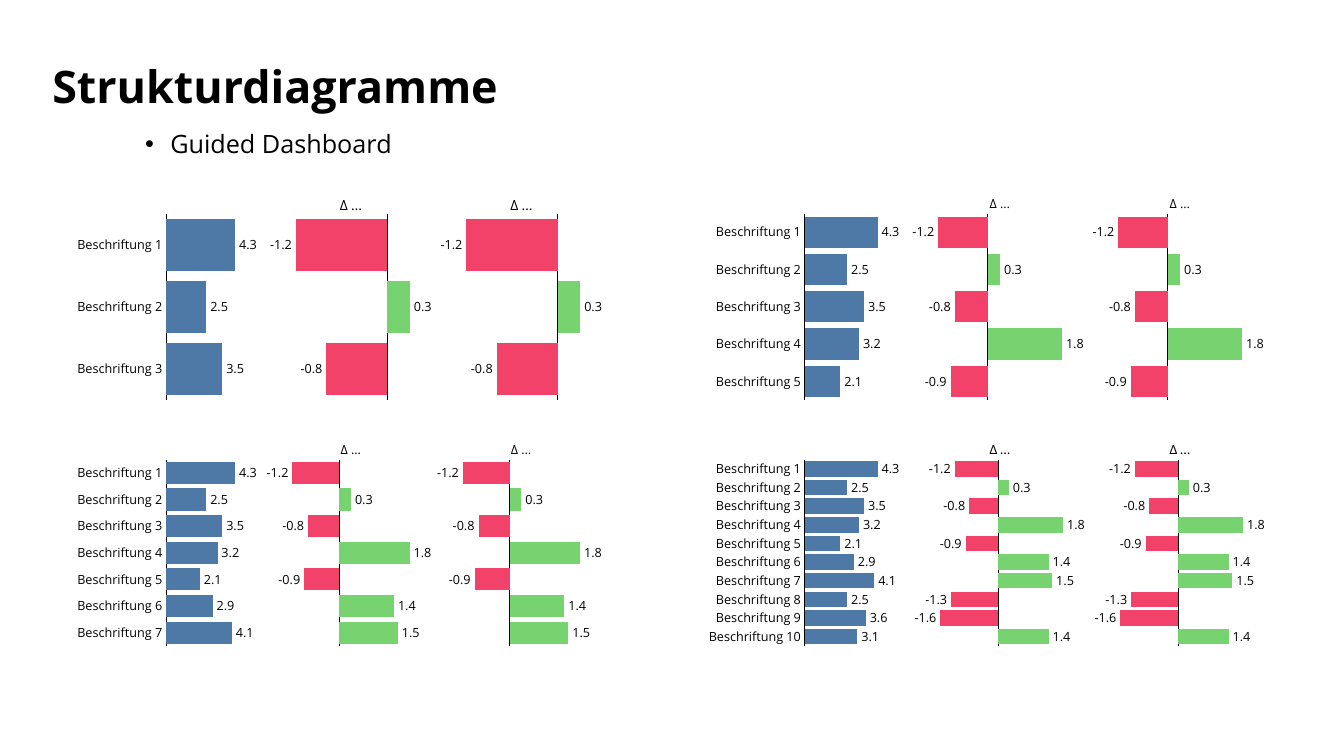
from lxml import etree
from pptx import Presentation
from pptx.chart.data import CategoryChartData
from pptx.dml.color import RGBColor
from pptx.enum.chart import XL_CHART_TYPE, XL_LABEL_POSITION, XL_TICK_LABEL_POSITION, XL_TICK_MARK
from pptx.enum.text import MSO_ANCHOR
from pptx.oxml import parse_xml
from pptx.oxml.ns import nsdecls, qn
from pptx.util import Inches, Pt

BLACK = RGBColor(0x00, 0x00, 0x00)
BLUE = RGBColor(0x4E, 0x79, 0xA7)
GREEN = RGBColor(0x77, 0xD3, 0x6F)
RED = RGBColor(0xF2, 0x42, 0x69)
FONT = "Open Sans"

BASE_VALUES = (4.3, 2.5, 3.5, 3.2, 2.1, 2.9, 4.1, 2.5, 3.6, 3.1)
DELTA_VALUES = (-1.2, 0.3, -0.8, 1.8, -0.9, 1.4, 1.5, -1.3, -1.6, 1.4)

# Shares of a panel's width: left edge and width
BASE_COLUMN = (0, 0.38)
DELTA_COLUMNS = ((0.386, 0.304), (0.695, 0.304))
# Shares of a chart's width: left edge and width of the plot
BASE_PLOT = (0.543, 0.383)
DELTA_PLOT = (0.092, 0.816)

PANEL_COLUMNS = ((0.52, 5.47), (6.79, 5.78))
PANEL_ROWS = (1.8, 4.24)
PANEL_HEIGHT = 2.32

# Number of bars, delta axis range, font and size of the delta titles
PANELS = (
    (3, (-1.4, 0.4), FONT, 10),
    (5, (-1.5, 2), FONT, 9),
    (7, (-1.5, 2), FONT, 9),
    (10, (-2, 2), "Calibri", 10),
)


def set_font(font, **changes):
    values = {"name": FONT, "size": Pt(9), "bold": False, **changes}
    for name, value in values.items():
        setattr(font, name, value)
    font.color.rgb = BLACK


def set_plot_area(chart, left, width):
    """Fix the inner plot area, in shares of the chart's size."""
    plot_area = chart._chartSpace.chart.plotArea
    for layout in plot_area.findall(qn("c:layout")):
        plot_area.remove(layout)
    layout = parse_xml(f"<c:layout {nsdecls('c')}><c:manualLayout/></c:layout>")
    settings = {"layoutTarget": "inner", "xMode": "edge", "yMode": "edge",
                "x": left, "y": 0.138, "w": width, "h": 0.797}
    for name, value in settings.items():
        etree.SubElement(layout[0], qn(f"c:{name}")).set("val", str(value))
    plot_area.insert(0, layout)


def add_bars(slide, box, categories, values, axis_range, plot_share, color):
    data = CategoryChartData(number_format="#,##0.0")
    data.categories = categories
    data.add_series("Series 1", values)
    frame = slide.shapes.add_chart(
        XL_CHART_TYPE.BAR_CLUSTERED, *(Inches(length) for length in box), data)
    chart = frame.chart
    chart.has_legend = False
    chart.has_title = False
    set_font(chart.font)
    set_plot_area(chart, *plot_share)

    category_axis = chart.category_axis
    category_axis.reverse_order = True
    category_axis.major_tick_mark = XL_TICK_MARK.NONE
    category_axis.format.line.color.rgb = BLACK
    category_axis.format.line.width = Pt(0.75)
    set_font(category_axis.tick_labels.font)

    value_axis = chart.value_axis
    value_axis.minimum_scale, value_axis.maximum_scale = axis_range
    value_axis.has_major_gridlines = False
    value_axis.visible = False

    plot = chart.plots[0]
    plot.gap_width = 20
    plot.vary_by_categories = False
    plot.has_data_labels = True
    labels = plot.data_labels
    label_format = {"show_value": True, "number_format": "#,##0.0",
                    "number_format_is_linked": False,
                    "position": XL_LABEL_POSITION.OUTSIDE_END}
    for name, value in label_format.items():
        setattr(labels, name, value)
    set_font(labels.font)

    series = plot.series[0]
    series.invert_if_negative = False
    series.format.fill.solid()
    series.format.fill.fore_color.rgb = color
    return chart


def add_delta_bars(slide, box, values, axis_range, title_font, title_size):
    """Add a variance chart with red negative bars and no category labels."""
    categories = [str(number) for number in range(1, len(values) + 1)]
    chart = add_bars(slide, box, categories, values, axis_range, DELTA_PLOT, GREEN)
    chart.category_axis.tick_label_position = XL_TICK_LABEL_POSITION.NONE
    for index, value in enumerate(values):
        if value < 0:
            fill = chart.plots[0].series[0].points[index].format.fill
            fill.solid()
            fill.fore_color.rgb = RED
    paragraph = chart.chart_title.text_frame.paragraphs[0]
    run = paragraph.add_run()
    run.text = " ∆ …"
    set_font(run.font, name=title_font, size=Pt(title_size))
    chart.chart_title.include_in_layout = False


def add_panel(slide, left, top, width, height, count, delta_range, title_font, title_size):
    """Add one base chart and its two variance charts side by side."""
    def column_box(column):
        start, share = column
        return left + start * width, top, share * width, height

    categories = [f"Beschriftung {number}" for number in range(1, count + 1)]
    add_bars(slide, column_box(BASE_COLUMN), categories, BASE_VALUES[:count],
             (0, 5), BASE_PLOT, BLUE)
    for column in DELTA_COLUMNS:
        add_delta_bars(slide, column_box(column), DELTA_VALUES[:count],
                       delta_range, title_font, title_size)


def add_text(slide, box, text, anchor, **font_format):
    shape = slide.shapes.add_textbox(*(Inches(length) for length in box))
    shape.text_frame.word_wrap = True
    shape.text_frame.vertical_anchor = anchor
    paragraph = shape.text_frame.paragraphs[0]
    paragraph.line_spacing = 0.9
    run = paragraph.add_run()
    run.text = text
    set_font(run.font, **font_format)
    return paragraph


def add_heading(slide):
    add_text(slide, (0.42, 0.56, 12.49, 0.64), "Strukturdiagramme",
             MSO_ANCHOR.MIDDLE, size=Pt(32), bold=True)
    paragraph = add_text(slide, (1.34, 1.26, 11.99, 0.59), "Guided Dashboard",
                         MSO_ANCHOR.TOP, size=Pt(18))
    paragraph.space_before = Pt(10)
    properties = paragraph._p.get_or_add_pPr()
    properties.set("marL", str(Inches(0.25)))
    properties.set("indent", str(-Inches(0.25)))
    etree.SubElement(properties, qn("a:buFont")).set("typeface", "Arial")
    etree.SubElement(properties, qn("a:buChar")).set("char", "•")


def main():
    presentation = Presentation()
    presentation.slide_width = Inches(13.33)
    presentation.slide_height = Inches(7.5)
    slide = presentation.slides.add_slide(presentation.slide_layouts[6])
    add_heading(slide)
    for index, panel in enumerate(PANELS):
        row, column = divmod(index, 2)
        left, width = PANEL_COLUMNS[column]
        add_panel(slide, left, PANEL_ROWS[row], width, PANEL_HEIGHT, *panel)
    presentation.save("out.pptx")


if __name__ == "__main__":
    main()
